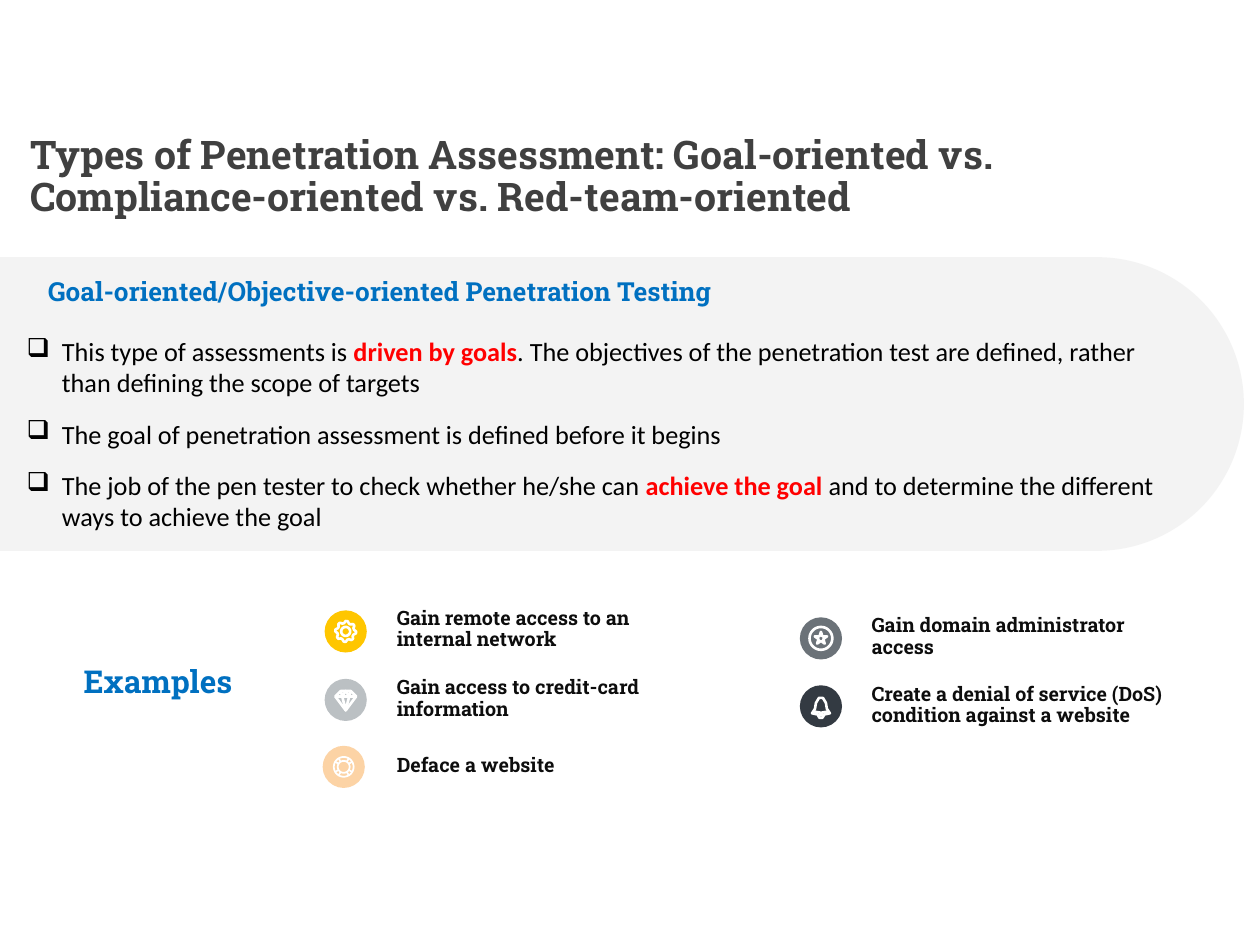
from math import cos, radians, sin

from lxml import etree
from pptx import Presentation
from pptx.dml.color import RGBColor
from pptx.enum.shapes import MSO_SHAPE
from pptx.enum.text import MSO_ANCHOR, PP_ALIGN
from pptx.oxml.ns import qn
from pptx.util import Cm, Pt

OVAL, ROUND_TOP = MSO_SHAPE.OVAL, MSO_SHAPE.ROUND_2_SAME_RECTANGLE
TOP, MIDDLE = MSO_ANCHOR.TOP, MSO_ANCHOR.MIDDLE
LEFT, CENTER = PP_ALIGN.LEFT, PP_ALIGN.CENTER
SLAB, BODY = "Roboto Slab", "Calibri"
BLUE, RED, BLACK = "0070C0", "FF0000", "000000"
DISC_SIZE = 0.85
BULLET_INDENT = Cm(0.71)

# Each paragraph is a list of (text, emphasised) runs.
GOALS = [
    [("This type of assessments is ", False), ("driven by goals", True),
     (". The objectives of the penetration test are defined, rather than "
      "defining the scope of targets", False)],
    [("The goal of penetration assessment is defined before it begins", False)],
    [("The job of the pen tester to check whether he/she can ", False),
     ("achieve the goal ", True),
     ("and to determine the different ways to achieve the goal", False)],
]


def rgb(hex_code):
    return RGBColor.from_string(hex_code)


def format_font(font, name, size, color, bold):
    font.name, font.size, font.bold = name, Pt(size), bold
    font.color.rgb = rgb(color)


def add_frame(slide, left, top, width, height, anchor):
    frame = slide.shapes.add_textbox(Cm(left), Cm(top), Cm(width), Cm(height)).text_frame
    frame.word_wrap = True
    frame.vertical_anchor = anchor
    return frame


def add_text(slide, text, left, top, width, height, *, size, color,
             align=LEFT, anchor=TOP):
    paragraph = add_frame(slide, left, top, width, height, anchor).paragraphs[0]
    paragraph.alignment = align
    paragraph.line_spacing = 0.9
    run = paragraph.add_run()
    run.text = text
    format_font(run.font, SLAB, size, color, True)


def add_goals(slide):
    frame = add_frame(slide, 0.36, 6.63, 23.16, 4.22, MIDDLE)
    frame.margin_left = frame.margin_right = Cm(0.18)
    frame.margin_top = frame.margin_bottom = Cm(0.1)
    for index, goal in enumerate(GOALS):
        paragraph = frame.add_paragraph() if index else frame.paragraphs[0]
        properties = paragraph._p.get_or_add_pPr()
        properties.set("marL", str(BULLET_INDENT))
        properties.set("indent", str(-BULLET_INDENT))
        etree.SubElement(properties, qn("a:buChar")).set("char", "❑")
        if index:
            paragraph.space_before = Pt(11.25)
        for text, emphasised in goal:
            run = paragraph.add_run()
            run.text = text
            format_font(run.font, BODY, 15, RED if emphasised else BLACK, emphasised)


def add_filled(slide, preset, left, top, width, height, color):
    shape = slide.shapes.add_shape(preset, Cm(left), Cm(top), Cm(width), Cm(height))
    shape.shadow.inherit = False
    shape.fill.solid()
    shape.fill.fore_color.rgb = rgb(color)
    shape.line.fill.background()
    return shape


def add_band(slide):
    """Light band running from the left edge to a rounded right end."""
    band = add_filled(slide, ROUND_TOP, 9.58, -4.39, 5.92, 25.07, "F2F2F2")
    band.rotation = 90
    band.adjustments[0], band.adjustments[1] = 0.5, 0
    color = band.fill._xPr.find(".//" + qn("a:srgbClr"))
    etree.SubElement(color, qn("a:alpha")).set("val", "88000")


def polar(radius, degrees):
    return radius * cos(radians(degrees)), radius * sin(radians(degrees))


def ring(*radii, count=36):
    """Closed contour of count points whose radii cycle through those given."""
    points = [polar(radii[i % len(radii)], 360 * i / count - 90) for i in range(count)]
    return points, True


def gear():
    return [ring(0.21, 0.21, 0.17, 0.17, count=32), ring(0.09)]


def diamond():
    outline = [(-0.1, -0.18), (0.1, -0.18), (0.21, -0.07), (0, 0.21), (-0.21, -0.07)]
    facets = [(-0.1, -0.18), (-0.07, -0.07), (0, -0.18), (0.07, -0.07), (0.1, -0.18)]
    return [(outline, True), (facets, False),
            ([(-0.21, -0.07), (0.21, -0.07)], False),
            ([(-0.07, -0.07), (0, 0.21), (0.07, -0.07)], False)]


def star_wheel():
    return [ring(0.23), ring(0.13, 0.05, count=10)]


def bell():
    right_side = [(0.04, -0.17), (0.1, -0.07), (0.12, 0.05), (0.18, 0.14)]
    left_side = [(-x, y) for x, y in reversed(right_side)]
    return [(right_side + [(0, 0.18)] + left_side, True),
            ([(-0.16, 0.1), (0, 0.13), (0.16, 0.1)], False),
            ([(-0.06, 0.18), (-0.03, 0.23), (0.03, 0.23), (0.06, 0.18)], False)]


def lifebuoy():
    ties = [([polar(0.12, angle + side), polar(0.2, angle + side)], False)
            for angle in range(45, 360, 90) for side in (-14, 14)]
    return [ring(0.2), ring(0.12)] + ties


def add_icon(slide, x, y, color, contours, weight):
    """Coloured disc centred at x, y with a white line symbol."""
    add_filled(slide, OVAL, x - DISC_SIZE / 2, y - DISC_SIZE / 2,
               DISC_SIZE, DISC_SIZE, color)
    builder = None
    for points, closed in contours:
        first, *rest = [(Cm(x + dx), Cm(y + dy)) for dx, dy in points]
        if builder is None:
            builder = slide.shapes.build_freeform(*first)
        else:
            builder.move_to(*first)
        builder.add_line_segments(rest, close=closed)
    symbol = builder.convert_to_shape()
    symbol.shadow.inherit = False
    symbol.fill.background()
    symbol.line.color.rgb = rgb("FFFFFF")
    symbol.line.width = Pt(weight)


def main():
    presentation = Presentation()
    presentation.slide_width, presentation.slide_height = Cm(25.4), Cm(19.05)
    slide = presentation.slides.add_slide(presentation.slide_layouts[6])

    add_band(slide)
    add_goals(slide)
    add_text(slide, "Types of Penetration Assessment: Goal-oriented vs. "
             "Compliance-oriented vs. Red-team-oriented",
             0.36, 2.57, 23.93, 2.03, size=22.5, color="404040", anchor=MIDDLE)
    add_text(slide, "Examples", 0.81, 13.26, 4.75, 1.02,
             size=18, color=BLUE, align=CENTER, anchor=MIDDLE)
    add_text(slide, "Goal-oriented/Objective-oriented Penetration Testing",
             0.36, 5.46, 14.6, 0.89, size=15, color=BLUE, align=CENTER, anchor=MIDDLE)

    # text, text left, top and height, icon centre, disc colour, symbol, line weight
    examples = [
        ("Gain remote access to an internal network",
         7.75, 12.14, 1.22, 6.97, 12.73, "FFC600", gear(), 1.5),
        ("Gain access to credit-card information",
         7.75, 13.54, 1.22, 6.97, 14.11, "BBC0C3", diamond(), 1.5),
        ("Gain domain administrator access",
         17.32, 12.29, 1.22, 16.55, 12.87, "6B7278", star_wheel(), 1.5),
        ("Create a denial of service (DoS) condition against a website",
         17.32, 13.67, 1.7, 16.55, 14.24, "333A42", bell(), 1.5),
        ("Deface a website",
         7.75, 15.11, 0.74, 6.93, 15.46, "FCD3A5", lifebuoy(), 1),
    ]
    for text, left, top, height, x, y, color, contours, weight in examples:
        add_text(slide, text, left, top, 6.63, height, size=11.25, color="0D0D0D")
        add_icon(slide, x, y, color, contours, weight)

    presentation.save("out.pptx")


if __name__ == "__main__":
    main()
